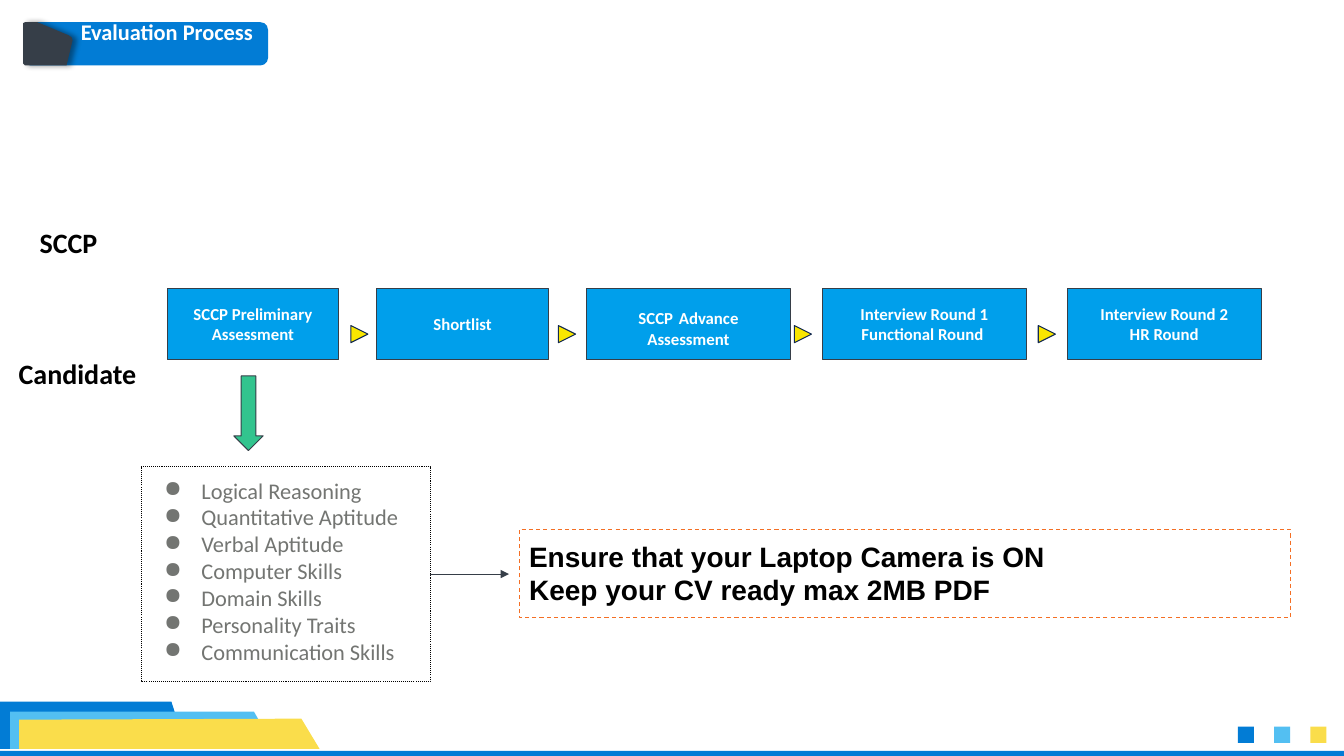
from lxml import etree
from pptx import Presentation, util as u
from pptx.dml.color import RGBColor
from pptx.enum import dml, shapes, text
from pptx.oxml import parse_xml
from pptx.oxml.ns import nsdecls, qn

# Every length is counted in square grid cells of a tenth of an inch
CELL = u.Inches(0.1)
COLUMNS, ROWS = 133.33, 75
BLUE, SKY, YELLOW, SLATE = "027CD5", "53BFF2", "FADD4B", "363E48"
KIND = shapes.MSO_SHAPE
MIDDLE, CENTER = text.MSO_ANCHOR.MIDDLE, text.PP_ALIGN.CENTER

deck = Presentation()
deck.slide_width, deck.slide_height = int(COLUMNS * CELL), ROWS * CELL
page = deck.slides.add_slide(deck.slide_layouts[6])


def add_block(kind, left, top, width, height, fill=None, line=None):
    box = page.shapes.add_shape(kind, *(int(n * CELL) for n in (left, top, width, height)))
    box.shadow.inherit = False
    if fill:
        box.fill.solid()
        box.fill.fore_color.rgb = RGBColor.from_string(fill)
    else:
        box.fill.background()
    if line:
        box.line.color.rgb = RGBColor.from_string(line)
        box.line.width = u.Pt(0.75)
    else:
        box.line.fill.background()
    return box


def write(box, words, size, color, bold=True, align=None, anchor=None, margins=(1, 1, 1, 1), font="Calibri"):
    frame = box.text_frame
    frame.word_wrap = True
    frame.vertical_anchor = anchor or text.MSO_ANCHOR.TOP
    frame.margin_left, frame.margin_top, frame.margin_right, frame.margin_bottom = (
        int(n * CELL) for n in margins)
    frame.text = words
    for para in frame.paragraphs:
        para.alignment = align or text.PP_ALIGN.LEFT
        para.font.name, para.font.size, para.font.bold = font, u.Pt(size), bold
        para.font.color.rgb = RGBColor.from_string(color)
    return frame


# Footer bar, squares and title plate
add_block(KIND.RECTANGLE, 0, ROWS - 0.5, COLUMNS, 0.5, BLUE)
for column, color in enumerate((BLUE, SKY, YELLOW)):
    add_block(KIND.RECTANGLE, 122.8 + 3.6 * column, 72.1, 1.6, 1.6, color)
title = add_block(KIND.ROUNDED_RECTANGLE, 2.3, 2.2, 24.3, 4.3, BLUE)
title.adjustments[0] = 0.178
write(title, "Evaluation Process", 16, "FFFFFF", anchor=MIDDLE,
      margins=(5.5, 0, 0, 2.5)).word_wrap = False

# Slanted footer bands and the dark title tab
outlines = [
    (BLUE, [(0, 69.6), (17, 69.6), (18.5, 74.3), (0, 74.3)]),
    (SKY, [(1, 70.6), (25.2, 70.6), (27.3, 74.3), (1, 74.3)]),
    (YELLOW, [(1.9, 71.4), (29.9, 71.3), (31.7, 74.3), (1.9, 74.3)]),
    (SLATE, [(2.5, 6.5), (2.3, 6.3), (2.3, 2.3), (2.5, 2.2), (3.7, 2.2),
             (6.8, 3.5), (7.1, 3.7), (7.2, 4), (6.6, 6.5)]),
]
for color, corners in outlines:
    start, *rest = [(int(x * CELL), int(y * CELL)) for x, y in corners]
    builder = page.shapes.build_freeform(*start)
    builder.add_line_segments(rest, close=True)
    band = builder.convert_to_shape()
    band.shadow.inherit = False
    band.fill.solid()
    band.fill.fore_color.rgb = RGBColor.from_string(color)
    band.line.fill.background()
tab_effects = band._element.spPr.find(qn("a:effectLst"))
tab_effects.append(parse_xml(
    f'<a:outerShdw {nsdecls("a")} blurRad="50800" dist="38100" dir="0" rotWithShape="0">'
    '<a:srgbClr val="000000"><a:alpha val="40000"/></a:srgbClr></a:outerShdw>'))

# Row labels
for label, left, top, width, height in (("SCCP", 1.2, 20.7, 11.2, 5.5),
                                        ("Candidate", 1.4, 34.8, 12.6, 4.4)):
    box = page.shapes.add_textbox(*(int(n * CELL) for n in (left, top, width, height)))
    write(box, label, 20, "000000", align=CENTER, anchor=text.MSO_ANCHOR.BOTTOM,
          margins=(0, 0.5, 0, 0.5))

# Process steps
steps = [
    ("SCCP Preliminary\vAssessment", 16.6, 17),
    ("Shortlist", 37.4, 17),
    ("SCCP", 58.2, 20.2),
    ("Interview Round 1\nFunctional Round ", 81.6, 20.2),
    ("Interview Round 2\nHR Round", 105.9, 19.2),
]
for words, left, width in steps:
    box = add_block(KIND.RECTANGLE, left, 28.6, width, 7.1, "009FEB", SLATE)
    frame = write(box, words, 12, "FFFFFF", align=CENTER, anchor=MIDDLE)
    if words == "SCCP":
        para = frame.paragraphs[0]
        span = para.add_run()
        span.text, span.font.size = " ", u.Pt(18)
        para.add_run().text = "Advance"
        para.add_line_break()
        para.add_run().text = "Assessment"

# Arrows between and below the steps
for left in (34.8, 55.4, 78.8, 103):
    add_block(KIND.ISOSCELES_TRIANGLE, left, 32.3, 1.7, 1.7, "F9E600", "132A50").rotation = 90
add_block(KIND.DOWN_ARROW, 23.2, 37.3, 2.9, 7.4, "32C48E", SLATE)

# Assessed skills
skills = add_block(KIND.RECTANGLE, 14, 46.3, 28.7, 21.3, line="000000")
skills.line.dash_style = dml.MSO_LINE.ROUND_DOT
names = ["Logical Reasoning", "Quantitative Aptitude", "Verbal Aptitude", "Computer Skills",
         "Domain Skills", "Personality Traits", "Communication Skills"]
skills.text_frame.text = "\n".join(names)
frame = write(skills, "\n".join(names), 16, "737572", bold=False)
for para in frame.paragraphs:
    props = para._p.get_or_add_pPr()
    props.set("marL", str(int(5 * CELL)))
    props.set("indent", str(int(-3.7 * CELL)))
    bullet_color = etree.Element(qn("a:buClr"))
    etree.SubElement(bullet_color, qn("a:srgbClr"), val="737572")
    props.insert(0, bullet_color)
    props.insert(1, etree.Element(qn("a:buChar"), char="●"))

# Candidate reminder
reminder = add_block(KIND.RECTANGLE, 51.5, 52.5, 76.5, 8.8, line="F46F24")
reminder.line.dash_style = dml.MSO_LINE.DASH
write(reminder, "Ensure that your Laptop Camera is ON\nKeep your CV ready max 2MB PDF",
      20, "000000", font="Arial")

# Link from skills to reminder
link = page.shapes.add_connector(shapes.MSO_CONNECTOR.STRAIGHT, int(42.7 * CELL), int(56.95 * CELL),
                                 int(50.5 * CELL), int(56.95 * CELL))
link.begin_connect(skills, 3)
link.line.color.rgb = RGBColor.from_string(SLATE)
link.line.width = u.Pt(0.75)
etree.SubElement(link.line._get_or_add_ln(), qn("a:tailEnd"), type="triangle")
etree.SubElement(link._element.spPr, qn("a:effectLst"))

deck.save("out.pptx")
